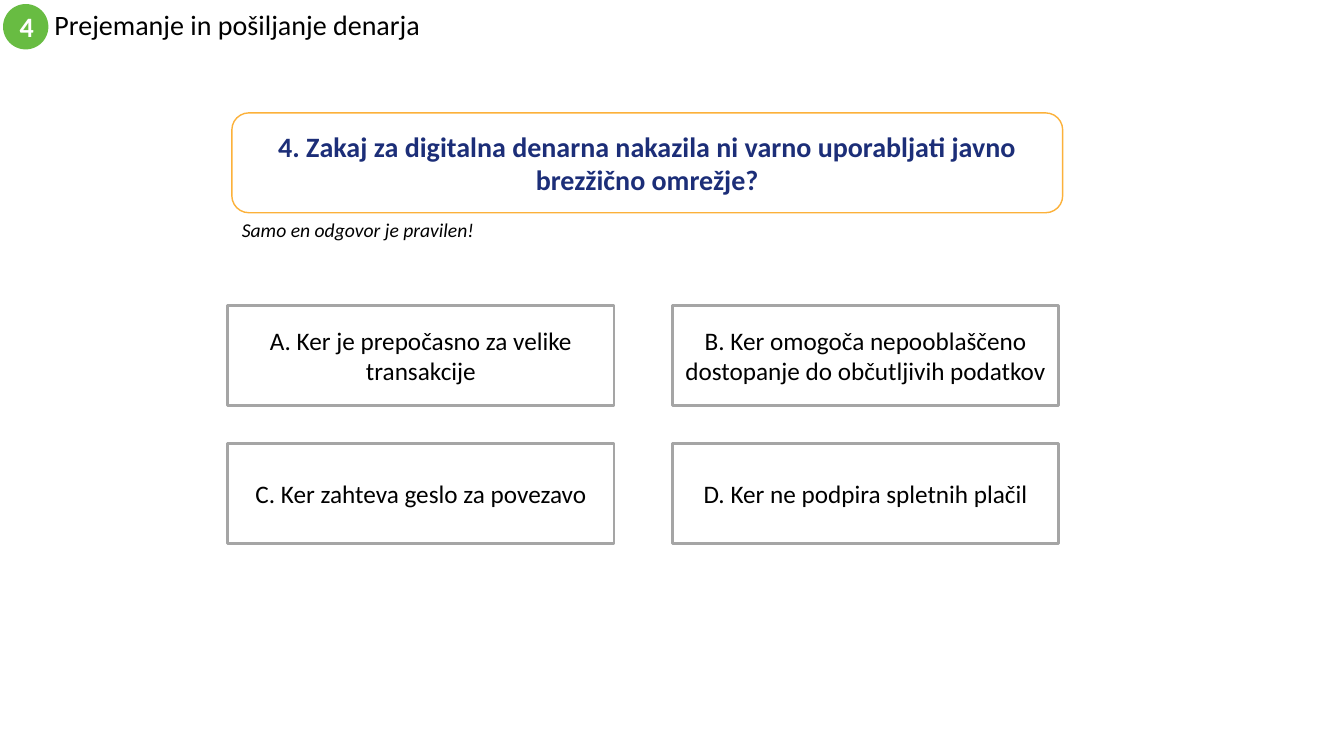
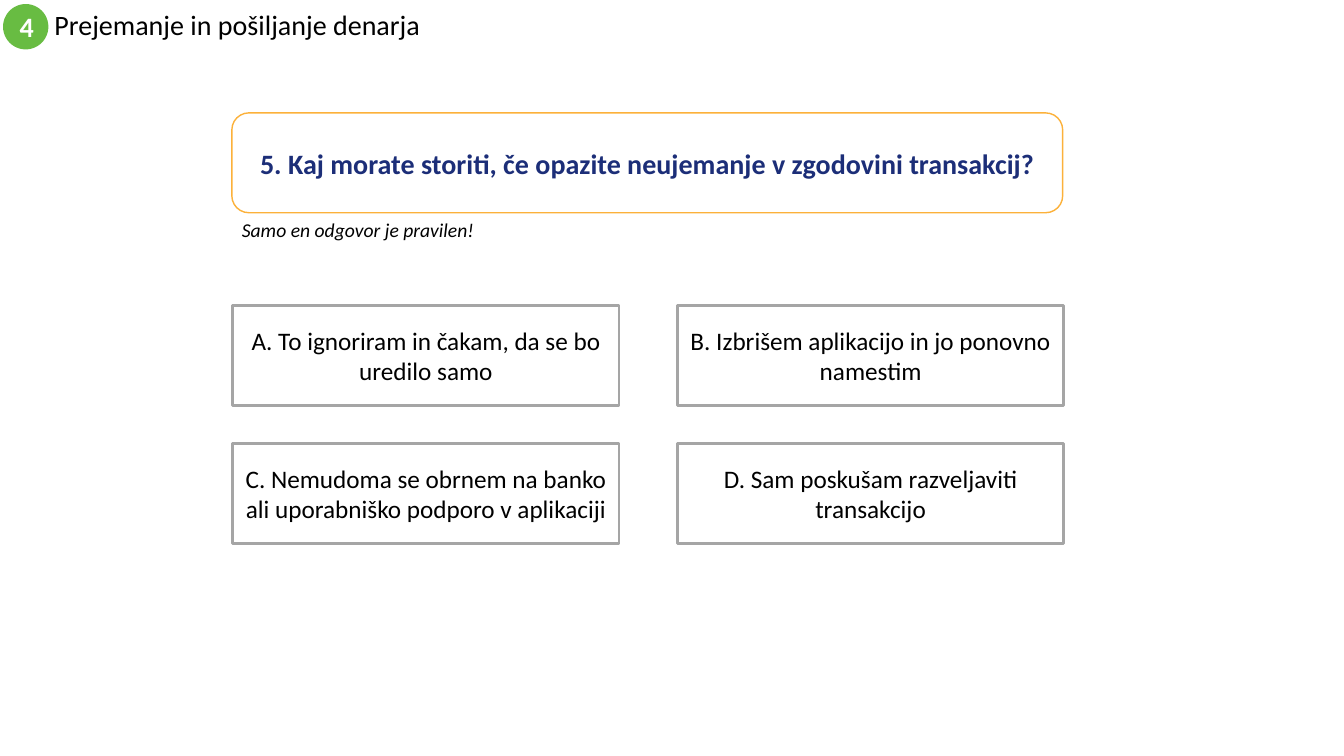
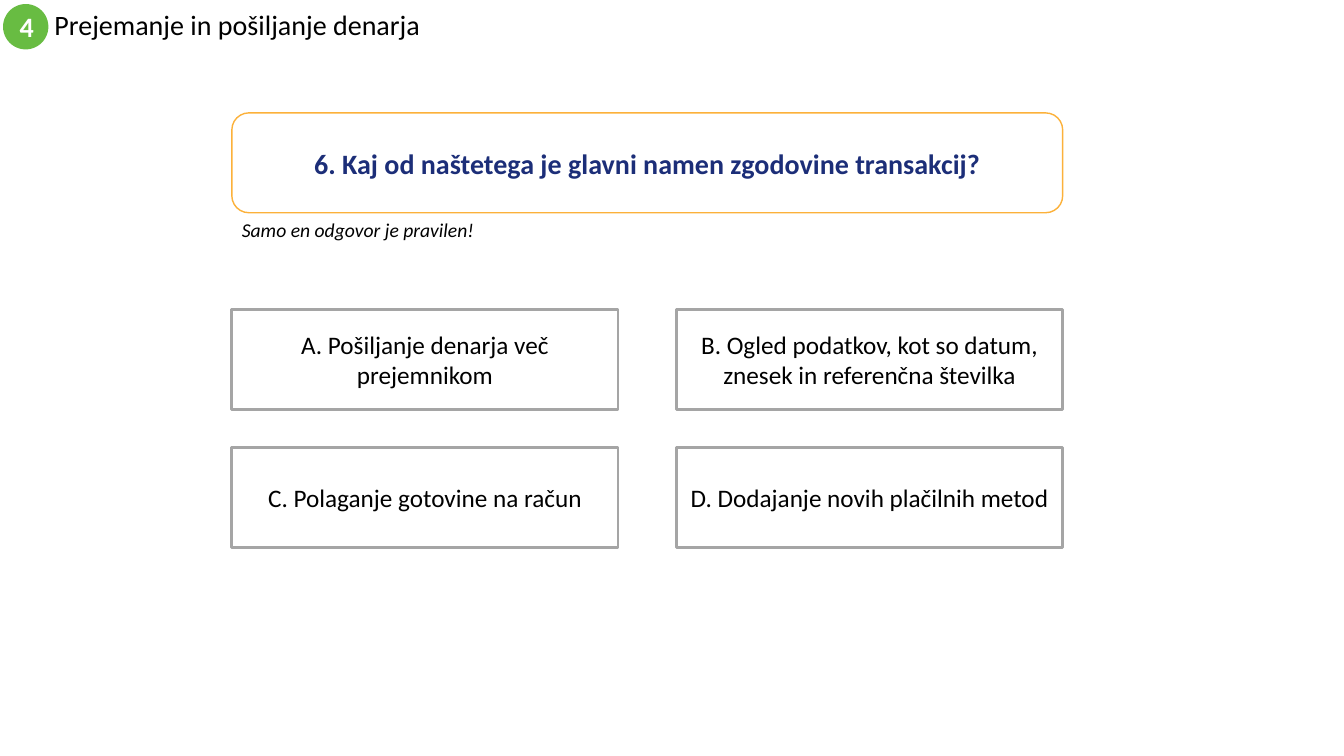
from collections import namedtuple

from pptx import Presentation
from pptx.dml.color import RGBColor
from pptx.enum.shapes import MSO_SHAPE
from pptx.enum.text import MSO_ANCHOR, MSO_AUTO_SIZE, PP_ALIGN
from pptx.util import Emu, Pt

EMU_PER_PX = 9144
FONT = "Calibri"
COLORS = {
    "background": "FFFFFF",
    "badge": "68BC42",
    "question_border": "FCB13A",
    "question_text": "1C2E78",
    "answer_border": "A5A5A5",
    "text": "000000",
}
CHAPTER_NUMBER = "4"
CHAPTER_TITLE = "Prejemanje in pošiljanje denarja"
HINT = "Samo en odgovor je pravilen!"

Box = namedtuple("Box", "left top width height")
Quiz = namedtuple("Quiz", "question answers answers_left answers_top")

HEADER_BOX = Box(3, 4, 841, 45)
QUESTION_BOX = Box(230, 112, 824, 156)
ANSWERS_WIDTH, ANSWERS_HEIGHT = 824, 236

QUIZZES = [
    Quiz(
        "4. Zakaj za digitalna denarna nakazila ni varno uporabljati javno brezžično omrežje?",
        [
            "A. Ker je prepočasno za velike transakcije",
            "B. Ker omogoča nepooblaščeno dostopanje do občutljivih podatkov",
            "C. Ker zahteva geslo za povezavo",
            "D. Ker ne podpira spletnih plačil",
        ],
        226, 303,
    ),
    Quiz(
        "5. Kaj morate storiti, če opazite neujemanje v zgodovini transakcij?",
        [
            "A. To ignoriram in čakam, da se bo uredilo samo",
            "B. Izbrišem aplikacijo in jo ponovno namestim",
            "C. Nemudoma se obrnem na banko ali uporabniško podporo v aplikaciji",
            "D. Sam poskušam razveljaviti transakcijo",
        ],
        231, 303,
    ),
    Quiz(
        "6. Kaj od naštetega je glavni namen zgodovine transakcij?",
        [
            "A. Pošiljanje denarja več prejemnikom",
            "B. Ogled podatkov, kot so datum, znesek in referenčna številka",
            "C. Polaganje gotovine na račun",
            "D. Dodajanje novih plačilnih metod",
        ],
        230, 307,
    ),
]


def px(length):
    return Emu(round(length * EMU_PER_PX))


def color(name):
    return RGBColor.from_string(COLORS[name])


def place(shape, box):
    shape.left, shape.top, shape.width, shape.height = map(px, box)


def write(shape, text, size, color_name="text", bold=False, italic=False,
          align=PP_ALIGN.CENTER, anchor=MSO_ANCHOR.MIDDLE):
    frame = shape.text_frame
    frame.text = text
    frame.word_wrap = True
    frame.auto_size = MSO_AUTO_SIZE.NONE
    frame.vertical_anchor = anchor
    paragraph = frame.paragraphs[0]
    paragraph.alignment = align
    font = paragraph.runs[0].font
    font.name = FONT
    font.size = Pt(size)
    font.bold = bold
    font.italic = italic
    font.color.rgb = color(color_name)
    return paragraph


def add_panel(slide, kind, box, fill, border=None, border_width=1):
    shape = slide.shapes.add_shape(kind, *map(px, box))
    shape.shadow.inherit = False
    shape.fill.solid()
    shape.fill.fore_color.rgb = color(fill)
    if border:
        shape.line.color.rgb = color(border)
        shape.line.width = Pt(border_width)
    else:
        shape.line.fill.background()
    return shape


def add_header(slide, box):
    badge_box = Box(box.left, box.top, box.height, box.height)
    badge = add_panel(slide, MSO_SHAPE.OVAL, badge_box, "badge")
    write(badge, CHAPTER_NUMBER, 20, "background", bold=True)
    title = slide.shapes.title
    place(title, Box(box.left + 41, box.top, box.width - 41, box.height))
    paragraph = write(title, CHAPTER_TITLE, 20, align=PP_ALIGN.LEFT)
    paragraph.line_spacing = 0.9


def add_question(slide, box, question):
    panel_height = 99
    panel = add_panel(slide, MSO_SHAPE.ROUNDED_RECTANGLE,
                      box._replace(height=panel_height),
                      "background", "question_border")
    panel.adjustments[0] = 0.17
    write(panel, question, 20, "question_text", bold=True)
    hint_box = Box(box.left, box.top + panel_height, 270, box.height - panel_height)
    hint = slide.shapes.add_textbox(*map(px, hint_box))
    write(hint, HINT, 14, italic=True, align=PP_ALIGN.LEFT, anchor=MSO_ANCHOR.TOP)


def add_answers(slide, box, answers, columns=2, column_gap=58, row_gap=38):
    rows = len(answers) // columns
    width = (box.width - column_gap * (columns - 1)) // columns
    height = (box.height - row_gap * (rows - 1)) // rows
    for index, answer in enumerate(answers):
        row, column = divmod(index, columns)
        answer_box = Box(box.left + column * (width + column_gap),
                         box.top + row * (height + row_gap), width, height)
        panel = add_panel(slide, MSO_SHAPE.RECTANGLE, answer_box,
                          "background", "answer_border", 2)
        write(panel, answer, 18)


def add_quiz_slide(presentation, quiz):
    slide = presentation.slides.add_slide(presentation.slide_layouts[5])
    add_header(slide, HEADER_BOX)
    add_question(slide, QUESTION_BOX, quiz.question)
    answers_box = Box(quiz.answers_left, quiz.answers_top, ANSWERS_WIDTH, ANSWERS_HEIGHT)
    add_answers(slide, answers_box, quiz.answers)


def main():
    presentation = Presentation()
    presentation.slide_width = px(1333)
    presentation.slide_height = px(750)
    background = presentation.slide_master.background.fill
    background.solid()
    background.fore_color.rgb = color("background")
    for quiz in QUIZZES:
        add_quiz_slide(presentation, quiz)
    presentation.save("out.pptx")


if __name__ == "__main__":
    main()
